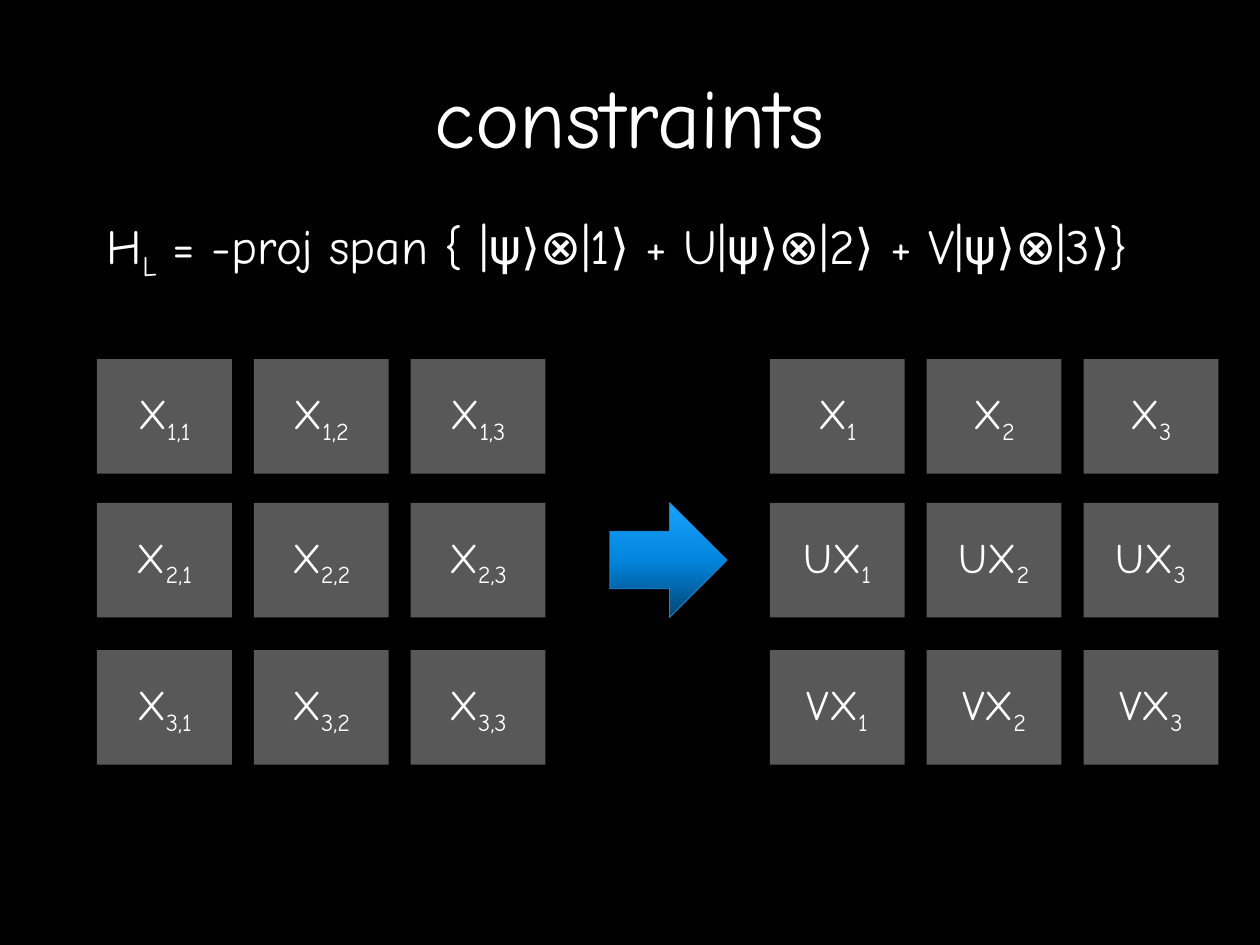
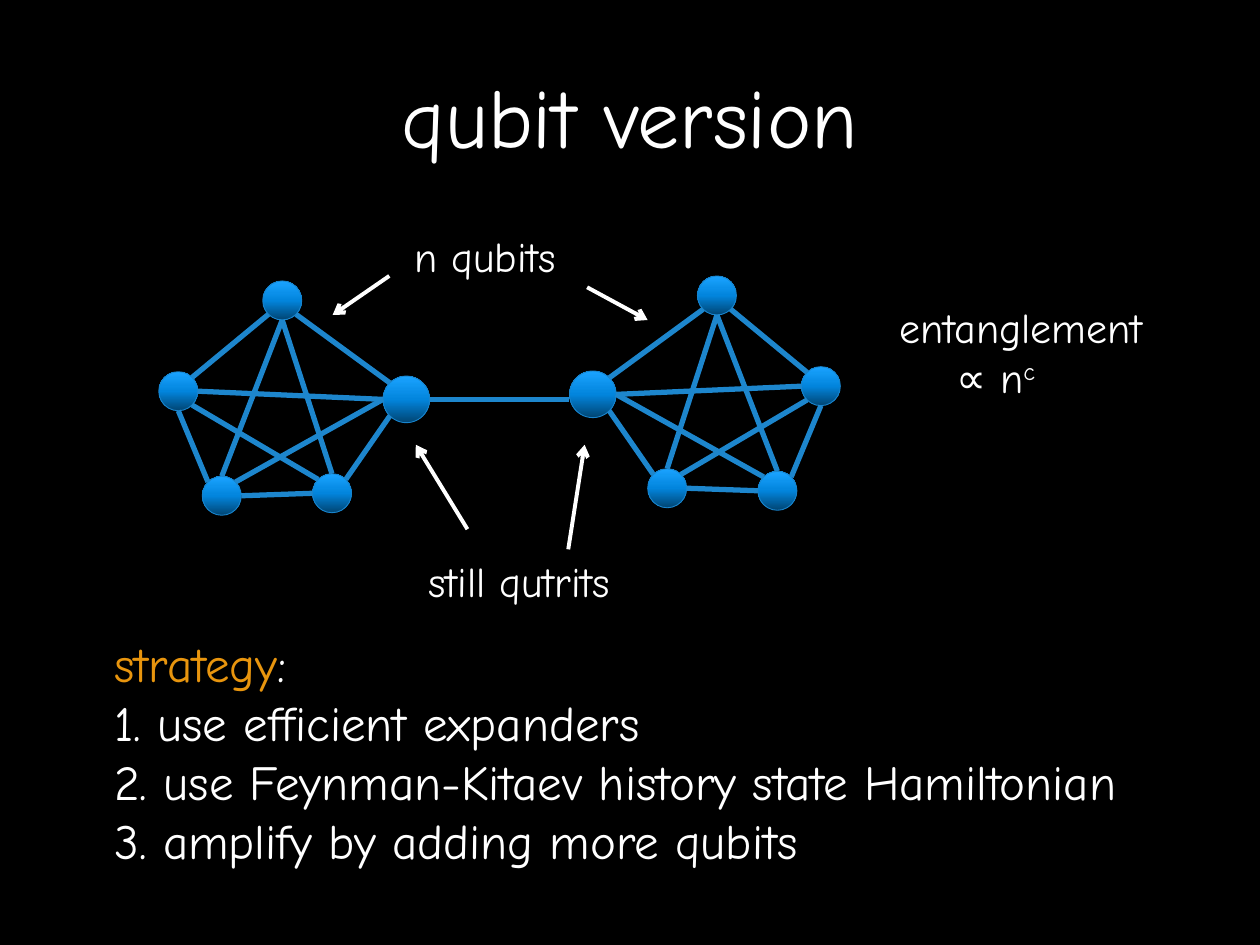
"""Builds the constraints and qubit version slides."""
import copy
import math
from dataclasses import dataclass
from typing import NamedTuple, Optional

import pptx
import pptx.dml.color
import pptx.enum.shapes
import pptx.enum.text
import pptx.oxml
import pptx.oxml.ns
import pptx.util
from lxml import etree

COLUMNS, ROWS = 100, 75
CELL = pptx.util.Inches(10) // COLUMNS

SHAPE = pptx.enum.shapes.MSO_SHAPE
ALIGN = pptx.enum.text.PP_ALIGN
ANCHOR = pptx.enum.text.MSO_ANCHOR
qn = pptx.oxml.ns.qn


@dataclass(frozen=True)
class Theme:
    """Colours, type sizes and line widths shared by the slides."""
    font: str = "Comic Neue"
    back: str = "000000"
    ink: str = "FFFFFF"
    accent: str = "E8950E"
    tile: str = "585858"
    edge: str = "1D86CD"
    rim: str = "1884CD"
    gradient: tuple = ((0, "014573"), (0.5, "0285DD"), (1, "1AA3FF"))
    title: float = 48
    body: float = 28
    label: float = 24
    rim_width: float = 0.5
    edge_width: float = 3
    arrow_width: float = 2.25


THEME = Theme()


class Box(NamedTuple):
    """A rectangle in grid columns and rows."""
    x: float
    y: float
    w: float
    h: float


class Point(NamedTuple):
    """A place in grid columns and rows."""
    x: float
    y: float


class Run(NamedTuple):
    """A stretch of text with its baseline shift in percent."""
    text: str
    base: int = 0
    color: str = THEME.ink


@dataclass(frozen=True)
class Node:
    """A round particle of an expander graph."""
    center: Point
    radius: float

    def mirrored(self, axis_sum: float, dy: float) -> "Node":
        """Reflects the node left to right and shifts it vertically."""
        return Node(Point(axis_sum - self.center.x, self.center.y + dy), self.radius)

    def rim(self, degrees: float) -> Point:
        """Gives the rim point at an angle counted clockwise from east."""
        a = math.radians(degrees)
        return Point(self.center.x + self.radius * math.cos(a),
                     self.center.y + self.radius * math.sin(a))


class Edge(NamedTuple):
    """A link between the rims of two named nodes."""
    start: str
    start_angle: int
    end: str
    end_angle: int


E, SE, S, SW, W, NW, N, NE = range(0, 360, 45)
NODES = {
    "hub": Node(Point(32.25, 31.7), 1.85),
    "top": Node(Point(22.4, 23.85), 1.55),
    "outer": Node(Point(14.15, 31.05), 1.55),
    "low_outer": Node(Point(17.6, 39.35), 1.55),
    "low_inner": Node(Point(26.35, 39.15), 1.55),
}
EDGES = (
    Edge("top", SW, "outer", NE),
    Edge("top", SE, "hub", NW),
    Edge("outer", S, "low_outer", NW),
    Edge("hub", SW, "low_inner", NE),
    Edge("low_inner", W, "low_outer", E),
    Edge("hub", W, "low_outer", NE),
    Edge("top", S, "low_inner", N),
    Edge("outer", E, "hub", W),
    Edge("low_outer", N, "top", S),
    Edge("outer", SE, "low_inner", NW),
)
AXIS_SUM, MIRROR_DY = 79.3, -0.4
TILE_ROWS = (28.5, 39.9, 51.6)
TILE_W, TILE_H, TILE_STEP = 10.7, 9.1, 12.45


def rgb(value: str) -> pptx.dml.color.RGBColor:
    """Turns a hex string into a colour."""
    return pptx.dml.color.RGBColor.from_string(value)


def emu(*cells: float) -> list:
    """Turns grid lengths into slide lengths."""
    return [pptx.util.Emu(round(c * CELL)) for c in cells]


def write(sp, *paragraphs, size: float, align=ALIGN.LEFT, anchor=ANCHOR.TOP,
          wrap: bool = True, indents: tuple = ()) -> None:
    """Fills a shape with paragraphs given as lists of runs."""
    tf = sp.text_frame
    tf.word_wrap, tf.vertical_anchor = wrap, anchor
    for i, runs in enumerate(paragraphs):
        p = tf.add_paragraph() if i else tf.paragraphs[0]
        p.alignment = align
        if i < len(indents) and indents[i]:
            p._p.get_or_add_pPr().set("marL", str(emu(indents[i])[0]))
        for run in runs:
            r = p.add_run()
            r.text = run.text
            r.font.name, r.font.size = THEME.font, pptx.util.Pt(size)
            r.font.color.rgb = rgb(run.color)
            if run.base:
                r._r.get_or_add_rPr().set("baseline", str(run.base * 1000))


def add_text(s, box: Box, *paragraphs, **style) -> None:
    """Adds an unwrapped text box that fits its text."""
    sp = s.shapes.add_textbox(*emu(*box))
    write(sp, *paragraphs, wrap=False, **style)
    sp.text_frame.auto_size = pptx.enum.text.MSO_AUTO_SIZE.SHAPE_TO_FIT_TEXT


def add_tile(s, box: Box, name: str, index: str) -> None:
    """Adds a grey matrix cell holding a symbol and its subscript."""
    sp = s.shapes.add_shape(SHAPE.RECTANGLE, *emu(*box))
    sp.shadow.inherit = False
    sp.fill.solid()
    sp.fill.fore_color.rgb = rgb(THEME.tile)
    sp.line.fill.background()
    write(sp, [Run(name), Run(index, -25)], size=THEME.label,
          align=ALIGN.CENTER, anchor=ANCHOR.MIDDLE)


def add_glossy(s, kind, box: Box) -> None:
    """Adds a shape with the blue gradient, light at the top."""
    sp = s.shapes.add_shape(kind, *emu(*box))
    sp.shadow.inherit = False
    sp.fill.gradient()
    sp.fill.gradient_angle = 90
    stops = sp._element.spPr.find(qn("a:gradFill")).find(qn("a:gsLst"))
    stops.append(copy.deepcopy(stops[0]))
    for stop, (position, color) in zip(sp.fill.gradient_stops, THEME.gradient):
        stop.position, stop.color.rgb = position, rgb(color)
    sp.line.color.rgb = rgb(THEME.rim)
    sp.line.width = pptx.util.Pt(THEME.rim_width)


def add_line(s, start: Point, end: Point, *, color: str, width: float,
             head: Optional[str] = None) -> None:
    """Adds a straight line, with an arrowhead at its end if named."""
    line = s.shapes.add_connector(pptx.enum.shapes.MSO_CONNECTOR.STRAIGHT,
                                  *emu(*start, *end))
    line.line.color.rgb = rgb(color)
    line.line.width = pptx.util.Pt(width)
    props = line._element.spPr
    if head:
        etree.SubElement(props.find(qn("a:ln")), qn("a:tailEnd")).set("type", head)
    etree.SubElement(props, qn("a:effectLst"))


def add_slide(prs, title: str):
    """Adds a blank black slide with its centred title."""
    s = prs.slides.add_slide(prs.slide_layouts[6])
    s.background.fill.solid()
    s.background.fill.fore_color.rgb = rgb(THEME.back)
    sp = s.shapes.add_textbox(*emu(7.5, 1.3, 85, 15.6))
    write(sp, [Run(title)], size=THEME.title, align=ALIGN.CENTER, anchor=ANCHOR.MIDDLE)
    return s


def add_matrix(s, left: float, labels: list) -> None:
    """Adds a matrix of tiles from rows of symbol and subscript pairs."""
    for y, row in zip(TILE_ROWS, labels):
        for i, (name, index) in enumerate(row):
            add_tile(s, Box(left + i * TILE_STEP, y, TILE_W, TILE_H), name, index)


def add_expander(s, nodes: dict, *, mirrored: bool) -> None:
    """Adds the nodes of one expander graph and the edges between them."""
    for node in nodes.values():
        d = 2 * node.radius
        add_glossy(s, SHAPE.OVAL, Box(node.center.x - node.radius,
                                     node.center.y - node.radius, d, d))
    for edge in EDGES:
        angles = (edge.start_angle, edge.end_angle)
        if mirrored:
            angles = tuple(180 - a for a in angles)
        add_line(s, nodes[edge.start].rim(angles[0]), nodes[edge.end].rim(angles[1]),
                 color=THEME.edge, width=THEME.edge_width)


def constraints_slide(prs) -> None:
    """Builds the slide on the constraint Hamiltonian."""
    s = add_slide(prs, "constraints")
    add_text(s, Box(7.5, 16.6, 90.2, 5.7),
             [Run("H"), Run("L", -25),
              Run(" = -proj span { |ψ⟩⊗|1⟩ + U|ψ⟩⊗|2⟩ + V|ψ⟩⊗|3⟩}")], size=THEME.body)
    add_matrix(s, 7.7, [[("X", f"{i},{j}") for j in (1, 2, 3)] for i in (1, 2, 3)])
    add_matrix(s, 61.1, [[(name, str(j)) for j in (1, 2, 3)] for name in ("X", "UX", "VX")])
    add_glossy(s, SHAPE.RIGHT_ARROW, Box(48.4, TILE_ROWS[1], 9.3, TILE_H))


def qubit_slide(prs) -> None:
    """Builds the slide on two linked expander graphs."""
    s = add_slide(prs, "qubit version")
    mirror = {k: n.mirrored(AXIS_SUM, MIRROR_DY) for k, n in NODES.items()}
    add_expander(s, NODES, mirrored=False)
    add_expander(s, mirror, mirrored=True)
    bridge = NODES["hub"].rim(E)
    add_line(s, bridge, Point(mirror["hub"].rim(W).x, bridge.y),
             color=THEME.edge, width=THEME.edge_width)
    for start, end in (
        (Point(30.9, 21.9), Point(26.4, 25)),
        (Point(46.6, 22.8), Point(51.4, 25.4)),
        (Point(37.1, 42), Point(33, 35.3)),
        (Point(45.1, 43.6), Point(46.4, 35.3)),
    ):
        add_line(s, start, end, color=THEME.ink, width=THEME.arrow_width, head="arrow")
    add_text(s, Box(31.9, 17.8, 14.5, 5), [Run("n qubits")], size=THEME.label)
    add_text(s, Box(33, 43.6, 19, 5), [Run("still qutrits")], size=THEME.label)
    add_text(s, Box(70.4, 23.4, 22.1, 9.1), [Run("entanglement")],
             [Run("∝ n"), Run("c", 30)], size=THEME.label, indents=(0, 4.5))
    add_text(s, Box(8.1, 49.8, 86.5, 19.9),
             [Run("strategy", color=THEME.accent), Run(":")],
             [Run("1. use efficient expanders")],
             [Run("2. use Feynman-Kitaev history state Hamiltonian")],
             [Run("3. amplify by adding more qubits")], size=THEME.body)


def main() -> None:
    """Builds and saves the presentation."""
    prs = pptx.Presentation()
    prs.slide_width, prs.slide_height = emu(COLUMNS, ROWS)
    constraints_slide(prs)
    qubit_slide(prs)
    prs.save("out.pptx")


if __name__ == "__main__":
    main()
